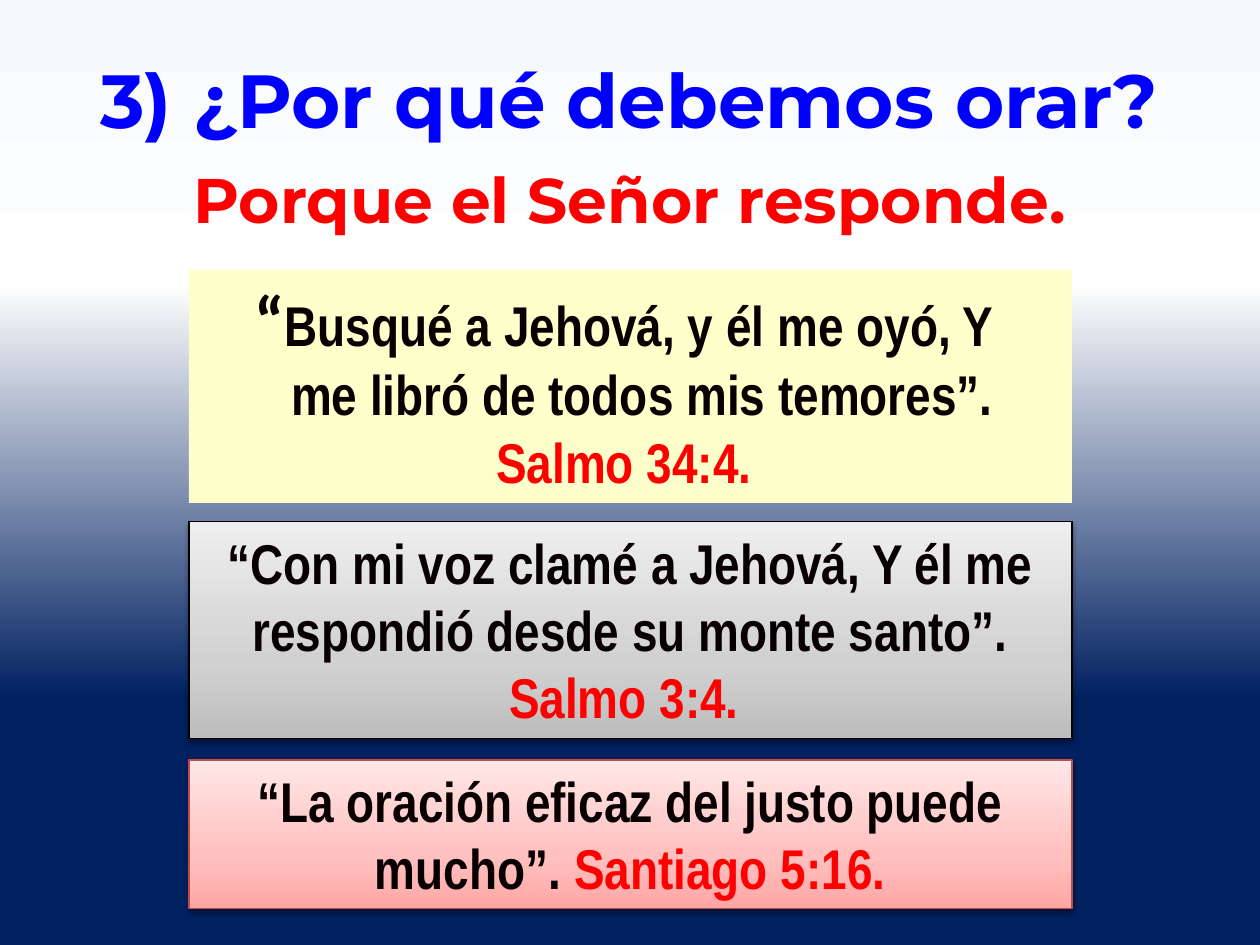
from dataclasses import dataclass
from typing import Optional

from lxml import etree
from pptx import Presentation
from pptx import util as u
from pptx.dml.color import RGBColor
from pptx.enum import shapes, text
from pptx.oxml import ns

COLORS = {
    "blue": "0000FF",
    "red": "FF0000",
    "ink": "080000",
    "black": "000000",
    "cream": "FFFFCC",
    "rose": "BF4C48",
}
Stops = list[tuple[int, str]]
SKY: Stops = [(0, "F6F9FC"), (30, "FFFFFF"), (74, "002060"), (83, "002060"), (100, "002060")]
SILVER: Stops = [(0, "BDBDBD"), (35, "D1D1D1"), (100, "EEEEEE")]
PINK: Stops = [(0, "FFA6A5"), (35, "FFC0BF"), (100, "FFE7E7")]
CARD_LEFT, CARD_WIDTH = 3.81, 17.8


@dataclass
class Span:
    words: str
    color: str = "ink"
    outline: str = "black"
    font: str = "Arial Narrow"
    size: float = 32
    outline_pt: float = 0.75


@dataclass
class Para:
    spans: list[Span]
    first_indent: float = 0


@dataclass
class Heading:
    area: tuple[float, float, float, float]
    span: Span


@dataclass
class Card:
    top: float
    height: float
    paras: list[Para]
    stops: Optional[Stops] = None
    border: Optional[str] = None


def reference(words: str) -> Span:
    return Span(words, "red", "red")


HEADINGS = [
    Heading((1.09, 0.94, 23.19, 2.08),
            Span("3) ¿Por qué debemos orar?", "blue", "blue", "Montserrat", 43, 0.9)),
    Heading((3.02, 3.12, 19.35, 1.8),
            Span("Porque el Señor responde.", "red", "red", "Montserrat", 36, 0.9)),
]
CARDS = [
    Card(5.44, 4.7, [
        Para([Span("“", font="Calibri", size=40), Span("Busqué a Jehová, y él me oyó, Y ")]),
        Para([Span("me libró de todos mis temores”. "), reference("Salmo 34:4. ")], 0.48),
    ]),
    Card(10.52, 4.37, [
        Para([Span("“Con mi voz clamé a Jehová, Y él me respondió desde su monte santo”. "),
              reference("Salmo 3:4. ")]),
    ], SILVER, "black"),
    Card(15.32, 3.0, [
        Para([Span("“La oración eficaz del justo puede mucho”. "),
              reference("Santiago 5:16.")]),
    ], PINK, "rose"),
]


def rgb(name: str) -> RGBColor:
    return RGBColor.from_string(COLORS[name])


def add_node(parent, tag: str, **attributes):
    return etree.SubElement(parent, ns.qn(tag), {k: str(v) for k, v in attributes.items()})


def set_gradient(fill, owner, stops: Stops, angle: int) -> None:
    """Fill with any number of stops; owner is the element that holds the fill."""
    fill.gradient()
    gradient = owner.find(".//" + ns.qn("a:gradFill"))
    for child in list(gradient):
        gradient.remove(child)
    stop_list = add_node(gradient, "a:gsLst")
    for position, color in stops:
        stop = add_node(stop_list, "a:gs", pos=position * 1000)
        add_node(stop, "a:srgbClr", val=color)
    add_node(gradient, "a:lin", ang=angle * 60000, scaled=0)


def add_shadow(shape) -> None:
    effects = shape.element.find(".//" + ns.qn("a:effectLst"))
    shadow = add_node(effects, "a:outerShdw", blurRad=int(u.Pt(3.1)), dist=int(u.Pt(1.6)),
                      dir=90 * 60000, rotWithShape=0)
    color = add_node(shadow, "a:srgbClr", val=COLORS["black"])
    add_node(color, "a:alpha", val=38000)


def add_span(para, span: Span) -> None:
    run = para.add_run()
    run.text = span.words
    run.font.name = span.font
    run.font.size = u.Pt(span.size)
    run.font.bold = True
    run.font.color.rgb = rgb(span.color)
    # Letter outline
    properties = run.font._element if hasattr(run.font, "_element") else run._r.get_or_add_rPr()
    outline = etree.Element(ns.qn("a:ln"), w=str(int(u.Pt(span.outline_pt))))
    add_node(add_node(outline, "a:solidFill"), "a:srgbClr", val=COLORS[span.outline])
    properties.insert(0, outline)


def write(shape, paras: list[Para]) -> None:
    frame = shape.text_frame
    frame.word_wrap = True
    frame.auto_size = text.MSO_AUTO_SIZE.SHAPE_TO_FIT_TEXT
    frame.vertical_anchor = text.MSO_ANCHOR.TOP
    for index, content in enumerate(paras):
        para = frame.paragraphs[0] if index == 0 else frame.add_paragraph()
        para.alignment = text.PP_ALIGN.CENTER
        if content.first_indent:
            properties = para._p.get_or_add_pPr()
            properties.set("marL", "0")
            properties.set("indent", str(int(u.Cm(content.first_indent))))
        for span in content.spans:
            add_span(para, span)


def add_heading(page, heading: Heading) -> None:
    box = page.shapes.add_textbox(*map(u.Cm, heading.area))
    write(box, [Para([heading.span])])


def add_card(page, card: Card) -> None:
    area = map(u.Cm, (CARD_LEFT, card.top, CARD_WIDTH, card.height))
    box = page.shapes.add_shape(shapes.MSO_SHAPE.RECTANGLE, *area)
    box.shadow.inherit = False
    if card.stops:
        set_gradient(box.fill, box.element, card.stops, 270)
        add_shadow(box)
    else:
        box.fill.solid()
        box.fill.fore_color.rgb = rgb("cream")
    if card.border:
        box.line.color.rgb = rgb(card.border)
        box.line.width = u.Pt(0.75)
    else:
        box.line.fill.background()
    write(box, card.paras)


def main() -> None:
    deck = Presentation()
    deck.slide_width, deck.slide_height = u.Cm(25.4), u.Cm(19.05)
    page = deck.slides.add_slide(deck.slide_layouts[6])
    set_gradient(page.background.fill, page.element, SKY, 90)
    # Question and answer
    for heading in HEADINGS:
        add_heading(page, heading)
    # Bible verses
    for card in CARDS:
        add_card(page, card)
    deck.save("out.pptx")


if __name__ == "__main__":
    main()
